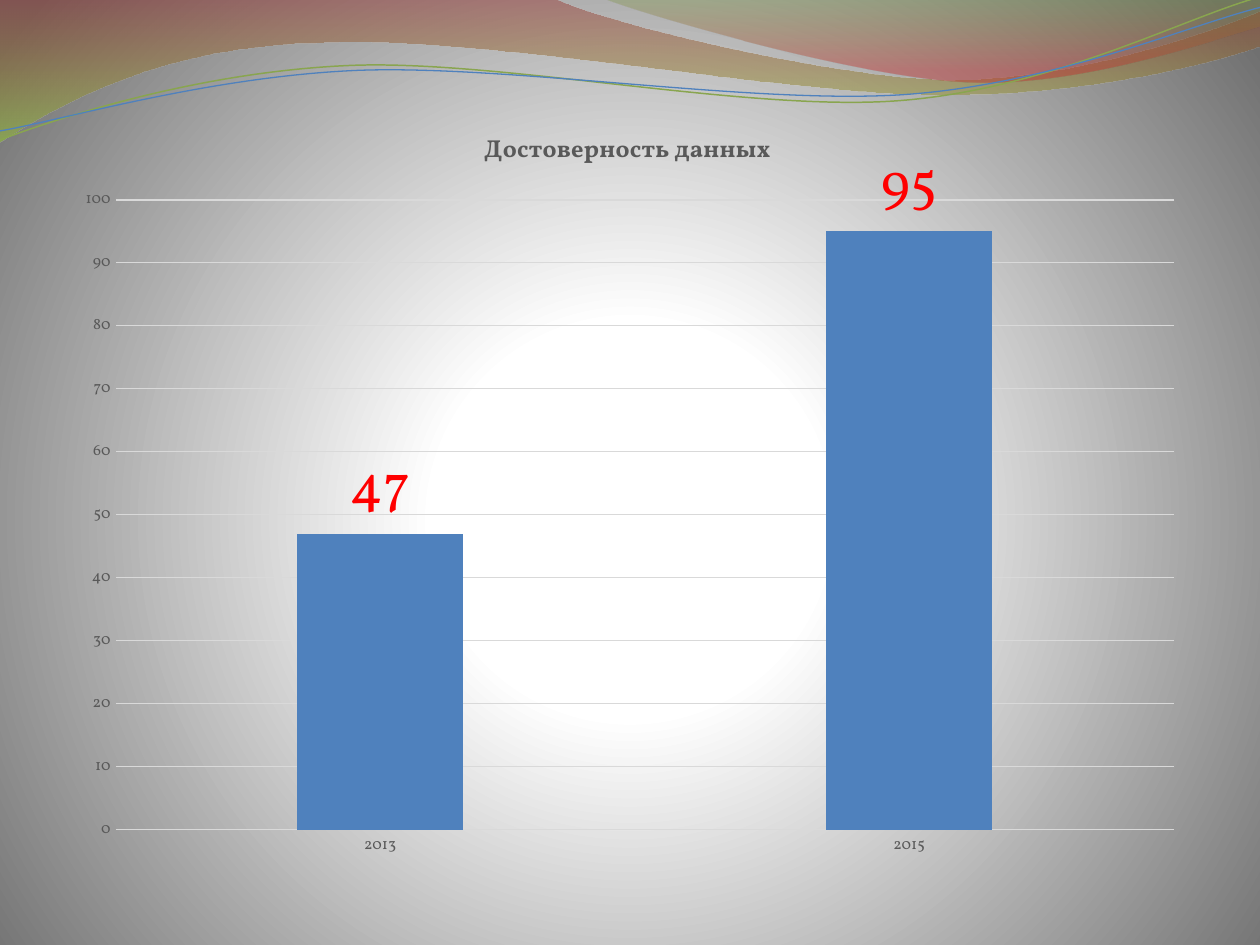
from math import cos, radians, sin

from lxml import etree
from pptx import Presentation
from pptx.chart.data import CategoryChartData
from pptx.dml.color import RGBColor
from pptx.enum.chart import XL_CHART_TYPE, XL_LABEL_POSITION, XL_TICK_MARK
from pptx.oxml import parse_xml
from pptx.oxml.ns import nsdecls, qn
from pptx.util import Cm, Pt

COLORS = {"white": "FFFFFF", "edge": "707070", "wine": "973330", "lime": "95C238",
          "olive": "769537", "red": "BE3330", "green": "89A54F", "blue": "4F81BD",
          "grid": "D9D9D9", "text": "595959", "label": "FF0000"}
FONT = "Vollkorn"
TITLE = "Достоверность данных"
YEARS = ["2013", "2015"]
SERIES = ("Series 1", [47, 95])

# Left, top, width, height in cm
CHART = (1.27, 2.13, 22.86, 15.44)
PLOT = (2.33, 4.03, 21.33, 12.7)
TITLE_AT = (9.67, 2.56)

# Gradient stops: position %, colour, opacity %
BACKGROUND = [(0, "white", 100), (25, "white", 100), (100, "edge", 100)]
RADIAL = '<a:path path="circle"><a:fillToRect l="10000" t="110000" r="10000" b="100000"/></a:path>'
DOWNWARD = '<a:lin ang="5400000" scaled="0"/>'

# Outlines in cm: one point is a straight step, three points are a Bezier curve
WAVES = [
    ([[(0, -.03)], [(11.18, -.03)],
      [(12.09, .43), (16.87, 1.6), (19.25, 1.6)],
      [(21.67, 1.6), (24.33, .66), (25.4, .23)], [(25.43, .91)],
      [(24.97, 1.12), (22.1, 1.93), (18.95, 1.91)],
      [(15.8, 1.91), (9.7, .71), (6.53, .86)],
      [(3.28, .89), (1.17, 2.11), (-.03, 2.87)]],
     [(0, "wine", 45), (100, "lime", 55)]),
    ([[(12.17, -.03)],
      [(12.93, .28), (17.32, 1.57), (19.53, 1.65)],
      [(21.74, 1.75), (24.41, .81), (25.4, .53)], [(25.4, 0)]],
     [(0, "olive", 30), (80, "red", 45)]),
]
# Strands also have a centre to tilt about, a colour and a width in points
TILT = -2.7
STRANDS = [
    ([[(0, 2.82)],
      [(1.22, 2.36), (4.01, 1.45), (7.04, 1.32)],
      [(10.03, 1.19), (15.06, 2.26), (18.11, 2.03)],
      [(21.16, 1.8), (23.83, .38), (25.35, -.05)]], (12.67, 1.46), "green", .85),
    ([[(0, 2.64)],
      [(1.19, 2.44), (4.17, 1.55), (7.19, 1.42)],
      [(10.24, 1.3), (15.16, 2.11), (18.21, 1.91)],
      [(21.23, 1.7), (23.9, .53), (25.4, .15)]], (12.69, 1.5), "blue", .75),
]


def rgb(name):
    return RGBColor.from_string(COLORS[name])


def set_gradient(fill, parent, stops, direction):
    """Give parent a gradient; fill is the python-pptx fill that belongs to it."""
    fill.background()
    gs = "".join(f'<a:gs pos="{pos * 1000}"><a:srgbClr val="{COLORS[color]}">'
                 f'<a:alpha val="{alpha * 1000}"/></a:srgbClr></a:gs>'
                 for pos, color, alpha in stops)
    grad = parse_xml(f'<a:gradFill {nsdecls("a")} rotWithShape="1">'
                     f'<a:gsLst>{gs}</a:gsLst>{direction}</a:gradFill>')
    parent.replace(parent.find(qn("a:noFill")), grad)


def turn(steps, center, angle):
    cx, cy = center
    c, n = cos(radians(angle)), sin(radians(angle))
    return [[(cx + (x - cx) * c - (y - cy) * n, cy + (x - cx) * n + (y - cy) * c)
             for x, y in step] for step in steps]


def add_outline(s, steps, close):
    """Draw all points as straight steps, then join each three into one curve."""
    start, *points = [(Cm(x), Cm(y)) for step in steps for x, y in step]
    fb = s.shapes.build_freeform(*start, scale=1.0)
    fb.add_line_segments(points, close=close)
    sp = fb.convert_to_shape()
    sp.shadow.inherit = False
    lines = iter(sp.element.findall(".//" + qn("a:lnTo")))
    for step in steps[1:]:
        parts = [next(lines) for _ in step]
        if len(parts) == 3:
            curve = etree.Element(qn("a:cubicBezTo"))
            parts[0].addprevious(curve)
            for part in parts:
                curve.append(part[0])
                part.getparent().remove(part)
    return sp


def set_font(font, size, color, bold=False):
    for name, value in {"name": FONT, "size": Pt(size), "bold": bold}.items():
        setattr(font, name, value)
    font.color.rgb = rgb(color)


def set_line(line, color, width=.75):
    line.color.rgb = rgb(color)
    line.width = Pt(width)


def set_layout(parent, index, box, **modes):
    """Place a chart part at a slide position in cm."""
    for old in parent.findall(qn("c:layout")):
        parent.remove(old)
    left, top, width, height = CHART
    sizes = (width, height, width, height)
    fractions = [(v - o) / size for v, o, size in zip(box, (left, top, 0, 0), sizes)]
    values = {**modes, "xMode": "edge", "yMode": "edge", **dict(zip("xywh", fractions))}
    layout = etree.Element(qn("c:layout"))
    manual = etree.SubElement(layout, qn("c:manualLayout"))
    for tag, value in values.items():
        etree.SubElement(manual, qn(f"c:{tag}")).set("val", str(value))
    parent.insert(index, layout)


def add_bar_chart(s):
    data = CategoryChartData()
    data.categories = YEARS
    data.add_series(*SERIES)
    chart = s.shapes.add_chart(XL_CHART_TYPE.COLUMN_CLUSTERED,
                               *map(Cm, CHART), data).chart
    chart.has_legend = False
    set_font(chart.font, 10, "text")

    chart.has_title = True
    tf = chart.chart_title.text_frame
    tf.text = TITLE
    set_font(tf.paragraphs[0].runs[0].font, 14, "text", bold=True)

    for axis in (chart.category_axis, chart.value_axis):
        axis.major_tick_mark = axis.minor_tick_mark = XL_TICK_MARK.NONE
        set_font(axis.tick_labels.font, 9, "text")
    set_line(chart.category_axis.format.line, "grid")
    va = chart.value_axis
    va.minimum_scale, va.maximum_scale, va.major_unit = 0, 100, 10
    va.format.line.fill.background()
    set_line(va.major_gridlines.format.line, "grid")

    plot = chart.plots[0]
    plot.gap_width, plot.overlap, plot.vary_by_categories = 219, -27, False
    fill = plot.series[0].format.fill
    fill.solid()
    fill.fore_color.rgb = rgb("blue")
    plot.has_data_labels = True
    labels = plot.data_labels
    labels.show_value = True
    labels.position = XL_LABEL_POSITION.OUTSIDE_END
    set_font(labels.font, 32, "label")

    root = chart.element
    set_layout(root.find(".//" + qn("c:plotArea")), 0, PLOT, layoutTarget="inner")
    set_layout(root.find(".//" + qn("c:title")), 1, TITLE_AT)


def main():
    prs = Presentation()
    prs.slide_width, prs.slide_height = Cm(25.4), Cm(19.05)
    s = prs.slides.add_slide(prs.slide_layouts[6])
    fill = s.background.fill
    set_gradient(fill, s.element.find(".//" + qn("p:bgPr")), BACKGROUND, RADIAL)
    for steps, stops in WAVES:
        sp = add_outline(s, steps, close=True)
        sp.line.fill.background()
        set_gradient(sp.fill, sp.element.spPr, stops, DOWNWARD)
    for steps, center, color, width in STRANDS:
        sp = add_outline(s, turn(steps, center, -TILT), close=False)
        sp.rotation = TILT
        sp.fill.background()
        set_line(sp.line, color, width)
    add_bar_chart(s)
    prs.save("out.pptx")


if __name__ == "__main__":
    main()
